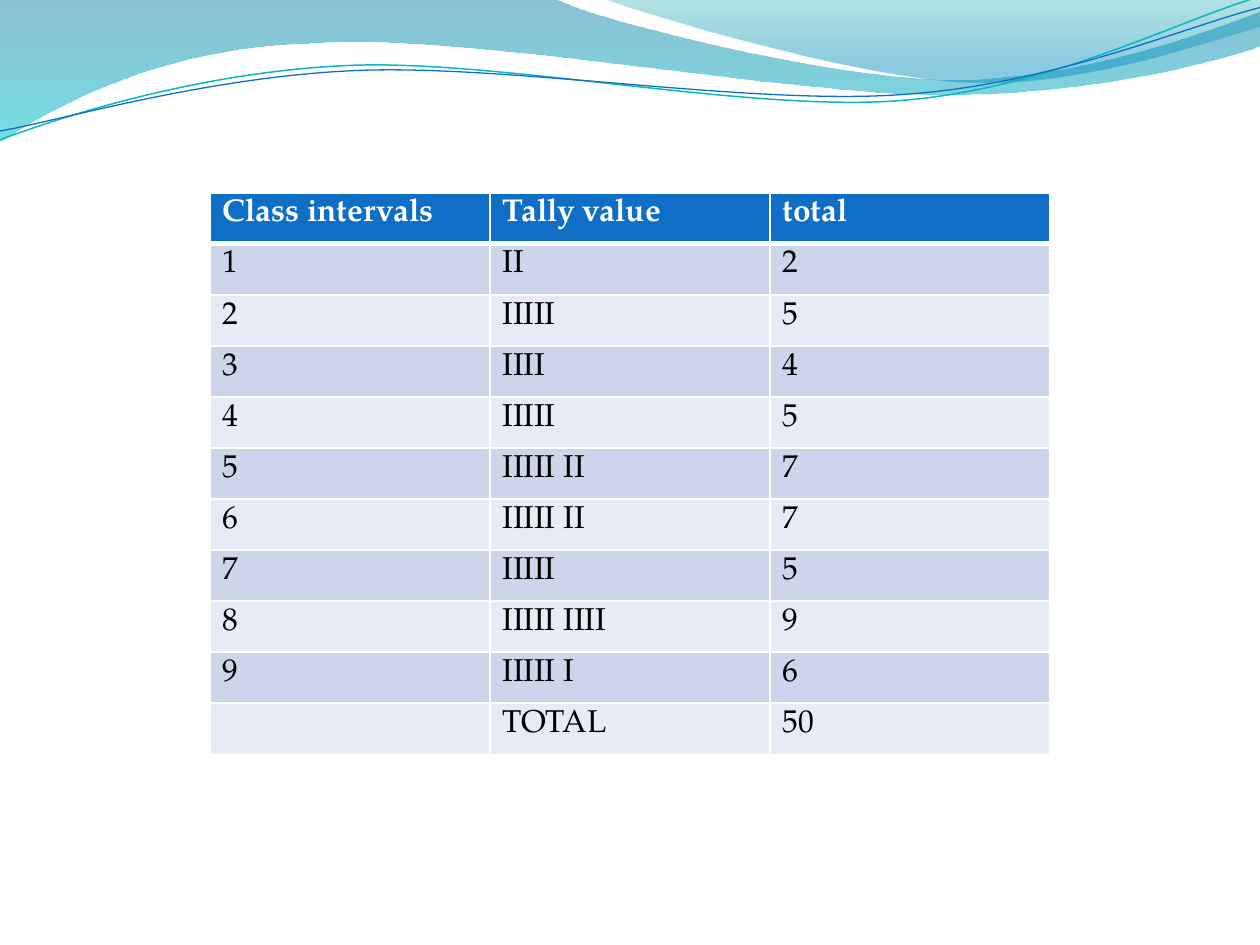
"""Build a slide with a tally table under a wave banner."""
from dataclasses import dataclass

from lxml import etree
from pptx import Presentation
from pptx.dml.color import RGBColor
from pptx.oxml import ns
from pptx.util import Inches, Pt


@dataclass(frozen=True)
class Theme:
    """Colours, font and type size of the slide."""
    font: str = "TeX Gyre Pagella"
    size: int = 18
    header: str = "0F6FC6"
    bands: tuple = ("CCD5EA", "E7EBF5")
    white: str = "FFFFFF"
    black: str = "000000"
    back_wave: tuple = ((0, "0074A1", 45), (1, "00C6CF", 55))
    front_wave: tuple = ((0, "00A1A9", 30), (0.8, "008BBF", 45))
    teal_line: str = "0AB8BF"
    blue_line: str = "0F6FC6"


THEME = Theme()
SLIDE_WIDTH = 10
TABLE_WIDTH = 6.67

BACK_WAVE = [
    (0, 0), (4.4, -0.01),
    (4.76, 0.17, 6.64, 0.63, 7.58, 0.63),
    (8.53, 0.63, 9.58, 0.26, 10, 0.09),
    (10.01, 0.36),
    (9.83, 0.44, 8.7, 0.76, 7.46, 0.75),
    (6.22, 0.75, 3.82, 0.28, 2.57, 0.34),
    (1.29, 0.36, 0.46, 0.83, -0.01, 1.13),
    (0, 0),
]
FRONT_WAVE = [
    (4.79, -0.01),
    (5.09, 0.11, 6.82, 0.62, 7.69, 0.65),
    (8.56, 0.69, 9.61, 0.32, 10, 0.21),
    (10, 0),
    (4.79, -0.01),
]
TEAL_CURVE = [
    (0, 1.11),
    (0.48, 0.93, 1.58, 0.57, 2.77, 0.52),
    (3.95, 0.47, 5.93, 0.89, 7.13, 0.8),
    (8.33, 0.71, 9.38, 0.15, 9.98, -0.02),
]
BLUE_CURVE = [
    (0, 1.04),
    (0.47, 0.96, 1.64, 0.61, 2.83, 0.56),
    (4.03, 0.51, 5.97, 0.84, 7.17, 0.75),
    (8.36, 0.67, 9.41, 0.21, 10, 0.06),
]

HEADINGS = ("Class intervals", "Tally value", "total")
TALLIES = ("II", "IIIII", "IIII", "IIIII", "IIIII II", "IIIII II",
           "IIIII", "IIIII IIII", "IIIII I")


def rgb(code):
    """Return a colour from its hex code."""
    return RGBColor.from_string(code)


def bend(shape, outline):
    """Turn the segments that have control points into cubic curves."""
    lines = list(shape.element.spPr.iter(ns.qn("a:lnTo")))
    for line, segment in zip(lines, outline[1:]):
        if len(segment) == 2:
            continue
        line.tag = ns.qn("a:cubicBezTo")
        line.clear()
        for x, y in zip(segment[::2], segment[1::2]):
            etree.SubElement(line, ns.qn("a:pt"),
                             x=str(Inches(x) - shape.left),
                             y=str(Inches(y) - shape.top))


def add_outline(slide, outline, close):
    """Add a freeform that follows an outline given in inches."""
    ends = [(Inches(segment[-2]), Inches(segment[-1]))
            for segment in outline]
    builder = slide.shapes.build_freeform(*ends[0])
    builder.add_line_segments(ends[1:], close=close)
    shape = builder.convert_to_shape()
    shape.shadow.inherit = False
    bend(shape, outline)
    return shape


def add_wave(slide, outline, stops):
    """Add a closed wave with a translucent downward gradient."""
    wave = add_outline(slide, outline, True)
    wave.line.fill.background()
    wave.fill.gradient()
    wave.fill.gradient_angle = 270
    for stop, (position, color, _) in zip(wave.fill.gradient_stops, stops):
        stop.position = position
        stop.color.rgb = rgb(color)
    colors = wave.element.spPr.iter(ns.qn("a:srgbClr"))
    for color, (_, _, opacity) in zip(colors, stops):
        etree.SubElement(color, ns.qn("a:alpha"), val=str(opacity * 1000))


def add_curve(slide, outline, color, width):
    """Add an open curved line."""
    curve = add_outline(slide, outline, False)
    curve.fill.background()
    curve.line.color.rgb = rgb(color)
    curve.line.width = Pt(width)


def set_border(cell, side, width):
    """Give one side of a cell a white border."""
    properties = cell._tc.get_or_add_tcPr()
    border = etree.SubElement(properties, ns.qn(f"a:ln{side}"),
                              w=str(Pt(width)))
    fill = etree.SubElement(border, ns.qn("a:solidFill"))
    etree.SubElement(fill, ns.qn("a:srgbClr"), val=THEME.white)


def fill_cell(cell, wording, row):
    """Style a cell for its row and write its wording."""
    is_header = row == 0
    widths = {"L": 1, "R": 1, "T": 3 if row == 1 else 1,
              "B": 3 if is_header else 1}
    for side, width in widths.items():
        set_border(cell, side, width)
    cell.fill.solid()
    cell.fill.fore_color.rgb = rgb(
        THEME.header if is_header else THEME.bands[(row - 1) % 2])
    if wording:
        run = cell.text_frame.paragraphs[0].add_run()
        run.text = wording
        run.font.name = THEME.font
        run.font.size = Pt(THEME.size)
        run.font.bold = is_header
        run.font.color.rgb = rgb(THEME.white if is_header else THEME.black)


def add_tally_table(slide):
    """Add the table of class intervals, tallies and totals."""
    counts = [tally.count("I") for tally in TALLIES]
    rows = [HEADINGS]
    rows += [(str(number), tally, str(count)) for number, (tally, count)
             in enumerate(zip(TALLIES, counts), start=1)]
    rows.append(("", "TOTAL", str(sum(counts))))
    left = (SLIDE_WIDTH - TABLE_WIDTH) / 2
    table = slide.shapes.add_table(
        len(rows), len(HEADINGS), Inches(left), Inches(1.53),
        Inches(TABLE_WIDTH), Inches(4.46)).table
    for row, wordings in enumerate(rows):
        for column, wording in enumerate(wordings):
            fill_cell(table.cell(row, column), wording, row)


def main():
    """Build and save the slide."""
    deck = Presentation()
    deck.slide_width, deck.slide_height = Inches(SLIDE_WIDTH), Inches(7.5)
    slide = deck.slides.add_slide(deck.slide_layouts[6])
    add_wave(slide, BACK_WAVE, THEME.back_wave)
    add_wave(slide, FRONT_WAVE, THEME.front_wave)
    add_curve(slide, TEAL_CURVE, THEME.teal_line, 0.85)
    add_curve(slide, BLUE_CURVE, THEME.blue_line, 0.75)
    add_tally_table(slide)
    deck.save("out.pptx")


if __name__ == "__main__":
    main()
